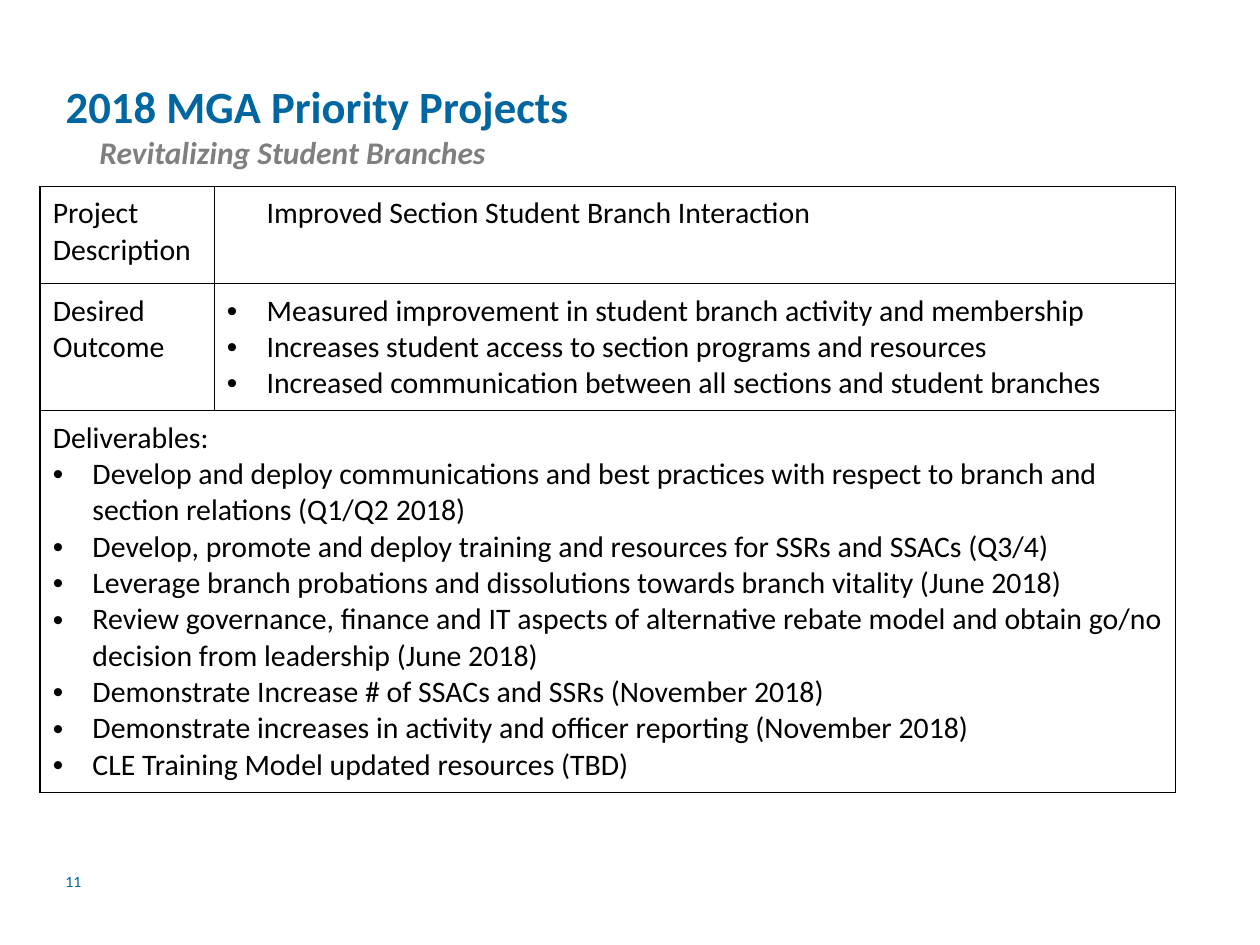
"""Build the slide on the student branch priority project."""
from lxml import etree
from pptx import Presentation
from pptx import util as u
from pptx.dml.color import RGBColor
from pptx.enum import text
from pptx.oxml import ns

FONT = "Calibri"
BLUE, GREY, BLACK = "0066A1", "7F7F7F", "000000"
TITLE = "2018 MGA Priority Projects"
SUB = "Revitalizing Student Branches"
PAGE = "11"
PLAIN, INSET, DOT = "plain", "inset", "dot"
ROWS = [
    [[(PLAIN, "Project Description")],
     [(INSET, "Improved Section Student Branch Interaction")]],
    [[(PLAIN, "Desired Outcome")],
     [(DOT, "Measured improvement in student branch activity and membership"),
      (DOT, "Increases student access to section programs and resources"),
      (DOT, "Increased communication between all sections and student branches")]],
    [[(PLAIN, "Deliverables:"),
      (DOT, "Develop and deploy communications and best practices with respect to branch and section relations (Q1/Q2 2018)"),
      (DOT, "Develop, promote and deploy training and resources for SSRs and SSACs (Q3/4)"),
      (DOT, "Leverage branch probations and dissolutions towards branch vitality (June 2018)"),
      (DOT, "Review governance, finance and IT aspects of alternative rebate model and obtain go/no decision from leadership (June 2018)"),
      (DOT, "Demonstrate Increase # of SSACs and SSRs (November 2018)"),
      (DOT, "Demonstrate increases in activity and officer reporting (November 2018)"),
      (DOT, "CLE Training Model updated resources (TBD)")]],
]
WIDTHS = [3.51, 19.38]
HEIGHTS = [1.96, 2.54, 6.93]


def add(root, tag, **attrs):
    """Append a drawing element and return it."""
    return etree.SubElement(root, ns.qn("a:" + tag), attrs)


def style(para, size, color, bold=False, italic=False):
    """Set the font of a paragraph."""
    font = para.font
    font.name, font.size = FONT, u.Pt(size)
    font.bold, font.italic = bold, italic
    font.color.rgb = RGBColor.from_string(color)


def indent(para, kind):
    """Set the indent and bullet of a paragraph."""
    props = para._p.get_or_add_pPr()
    left = u.Cm(0 if kind == PLAIN else 0.8)
    props.set("marL", str(left))
    props.set("indent", str(-left if kind == DOT else 0))
    if kind == DOT:
        add(props, "buFont", typeface="Arial")
        add(props, "buChar", char="•")
    else:
        add(props, "buNone")


def place(shape, box, words, anchor, size, color, gap=1.0, **look):
    """Move a text shape and write its one line."""
    shape.left, shape.top, shape.width, shape.height = map(u.Cm, box)
    frame = shape.text_frame
    frame.text = words
    frame.word_wrap = True
    frame.auto_size = text.MSO_AUTO_SIZE.NONE
    frame.vertical_anchor = anchor
    para = frame.paragraphs[0]
    indent(para, PLAIN)
    para.alignment = text.PP_ALIGN.LEFT
    para.line_spacing, para.space_before = gap, u.Pt(0)
    style(para, size, color, **look)


def border(cell):
    """Draw the four sides of a cell and clear its fill."""
    props = cell._tc.get_or_add_tcPr()
    for side in ("lnL", "lnR", "lnT", "lnB"):
        line = add(props, side, w=str(u.Pt(1)))
        add(add(line, "solidFill"), "srgbClr", val=BLACK)
    cell.fill.background()


def write(cell, items):
    """Fill a cell with paragraphs."""
    cell.margin_top = cell.margin_bottom = u.Cm(0.18)
    frame = cell.text_frame
    for i, (kind, words) in enumerate(items):
        para = frame.add_paragraph() if i else frame.paragraphs[0]
        para.text = words
        indent(para, kind)
        style(para, 17, BLACK)


def main():
    """Build and save the deck."""
    deck = Presentation()
    deck.slide_width, deck.slide_height = u.Cm(25.4), u.Cm(19.05)
    slide = deck.slides.add_slide(deck.slide_layouts[1])
    anchor = text.MSO_ANCHOR
    place(slide.shapes.title, (1.07, 1.3, 21.89, 1.52), TITLE,
          anchor.BOTTOM, 25.5, BLUE, 0.9, bold=True)
    place(slide.placeholders[1], (1.75, 2.77, 21.89, 0.99), SUB,
          anchor.TOP, 18, GREY, 0.7, bold=True, italic=True)
    page = slide.shapes.add_textbox(0, 0, 0, 0)
    place(page, (1.07, 17.25, 1.35, 1.02), PAGE, anchor.MIDDLE, 9, BLUE)

    area = map(u.Cm, (0.81, 3.76, sum(WIDTHS), sum(HEIGHTS)))
    table = slide.shapes.add_table(len(ROWS), len(WIDTHS), *area).table
    table.first_row = table.horz_banding = False
    for col, width in zip(table.columns, WIDTHS):
        col.width = u.Cm(width)
    for row, height in zip(table.rows, HEIGHTS):
        row.height = u.Cm(height)
    for cell in table.iter_cells():
        border(cell)
    table.cell(2, 0).merge(table.cell(2, 1))
    for r, row in enumerate(ROWS):
        for c, items in enumerate(row):
            write(table.cell(r, c), items)
    deck.save("out.pptx")


if __name__ == "__main__":
    main()
